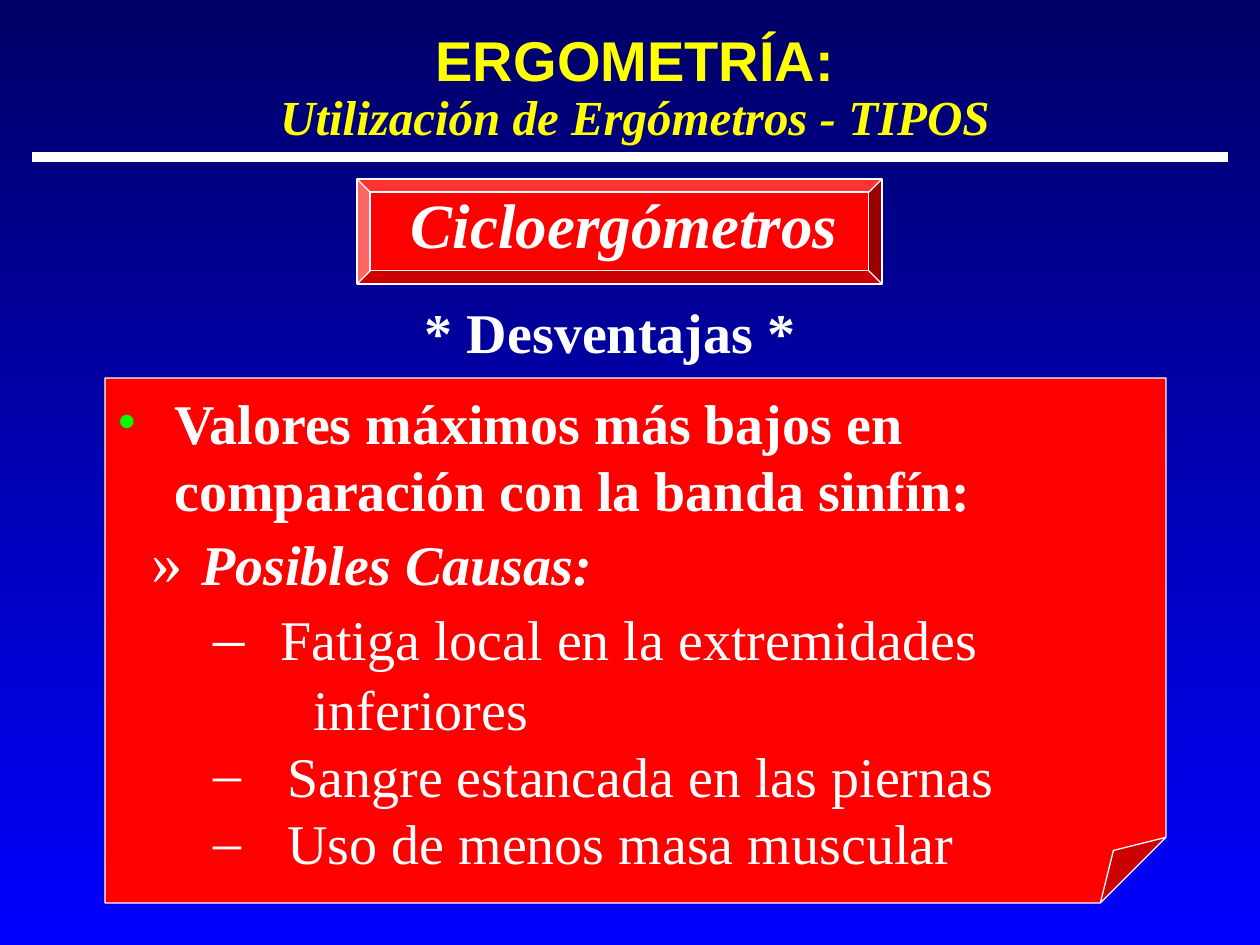
from dataclasses import dataclass

from lxml import etree
from pptx import Presentation
from pptx.dml.color import RGBColor
from pptx.enum.shapes import MSO_CONNECTOR, MSO_SHAPE
from pptx.enum.text import MSO_ANCHOR, PP_ALIGN
from pptx.oxml.ns import qn
from pptx.util import Emu, Pt

PX = 914400 / 126
LEFT, MID, RIGHT = PP_ALIGN.LEFT, PP_ALIGN.CENTER, PP_ALIGN.RIGHT
TOP, HALF = MSO_ANCHOR.TOP, MSO_ANCHOR.MIDDLE
FOLD, BEVEL = MSO_SHAPE.FOLDED_CORNER, MSO_SHAPE.BEVEL
LINE = MSO_CONNECTOR.STRAIGHT

COLORS = {
    "navy": "000066", "blue": "0000FF", "red": "FF0000", "white": "FFFFFF",
    "yellow": "FFFF00", "green": "00FF00", "gray": "808080",
}
SERIF = {"name": "Times New Roman", "size": Pt(32), "bold": False, "italic": False}
FORMATS = {
    "head": {"name": "Arial", "size": Pt(32), "bold": True, "italic": False},
    "sub": SERIF | {"size": Pt(28), "bold": True, "italic": True},
    "label": SERIF | {"size": Pt(36), "bold": True, "italic": True},
    "strong": SERIF | {"bold": True},
    "cause": SERIF | {"bold": True, "italic": True},
    "plain": SERIF,
}


@dataclass
class Para:
    """Each run is (text, format); a line break parts the runs."""
    runs: list[tuple[str, str]]
    color: str = "white"
    align: PP_ALIGN = LEFT
    lines: float = 1.0
    before: int = 0
    left: int = 0
    hang: int = 0
    bullet: str = ""
    tint: str = "white"
    scale: int = 100
    shadow: bool = False


@dataclass
class Box:
    at: tuple[int, int, int, int]
    paras: list[Para]
    anchor: MSO_ANCHOR = TOP
    wrap: bool = True


@dataclass
class Panel:
    kind: MSO_SHAPE
    at: tuple[int, int, int, int]


PANELS = [
    Panel(FOLD, (105, 378, 1061, 525)),
    Panel(BEVEL, (357, 179, 525, 105)),
]
BOXES = [
    Box((220, 53, 830, 73), [
        Para([("ERGOMETRÍA:", "head"), ("Utilización de Ergómetros - TIPOS", "sub")],
             "yellow", MID, 0.9),
    ], HALF),
    Box((346, 200, 557, 84), [
        Para([("Cicloergómetros", "label")], align=MID, lines=0.7, shadow=True),
    ]),
    Box((105, 382, 1029, 500), [
        Para([("Valores máximos más bajos en", "strong"),
              ("comparación con la banda sinfín:", "strong")],
             left=57, hang=57, bullet="•", tint="green"),
        Para([("Posibles Causas:", "cause")],
             before=7, left=84, hang=50, bullet="»", scale=112),
        Para([("Fatiga local en la extremidades", "plain")],
             before=8, left=163, hang=67, bullet="–", scale=112),
        Para([("inferiores", "plain")], before=2, left=196),
        Para([("Sangre estancada en las piernas", "plain")],
             left=170, hang=74, bullet="–"),
        Para([("Uso de menos masa muscular", "plain")],
             left=170, hang=74, bullet="–"),
    ]),
    Box((398, 291, 410, 79), [
        Para([("* Desventajas *", "strong")], align=RIGHT),
    ], wrap=False),
]


def emu(px: int) -> Emu:
    return Emu(round(px * PX))


def rgb(name: str) -> RGBColor:
    return RGBColor.from_string(COLORS[name])


def add_tag(parent, tag: str, **attrs):
    return etree.SubElement(parent, qn(tag), attrs)


def add_color(parent, name: str) -> None:
    add_tag(parent, "a:srgbClr", val=COLORS[name])


def add_glow(run) -> None:
    """Put a gray shadow behind the letters."""
    props = run.font._element
    effects = etree.Element(qn("a:effectLst"))
    shade = add_tag(effects, "a:outerShdw", dist="35921", dir="2700000")
    add_color(shade, "gray")
    props.find(qn("a:solidFill")).addnext(effects)


def draw_para(para, data: Para) -> None:
    para.alignment = data.align
    para.line_spacing = data.lines
    para.space_before = emu(data.before)
    props = para._p.get_or_add_pPr()
    props.set("marL", str(emu(data.left)))
    props.set("indent", str(-emu(data.hang)))
    if data.bullet:
        add_color(add_tag(props, "a:buClr"), data.tint)
        add_tag(props, "a:buSzPct", val=str(data.scale * 1000))
        add_tag(props, "a:buFont", typeface="Times New Roman")
        add_tag(props, "a:buChar", char=data.bullet)
    for spot, (text, style) in enumerate(data.runs):
        if spot:
            para.add_line_break()
        run = para.add_run()
        run.text = text
        for key, value in FORMATS[style].items():
            setattr(run.font, key, value)
        run.font.color.rgb = rgb(data.color)
        if data.shadow:
            add_glow(run)


def draw_box(slide, box: Box) -> None:
    frame = slide.shapes.add_textbox(*map(emu, box.at)).text_frame
    frame.word_wrap = box.wrap
    frame.vertical_anchor = box.anchor
    for spot, data in enumerate(box.paras):
        draw_para(frame.add_paragraph() if spot else frame.paragraphs[0], data)


def draw_panel(slide, panel: Panel) -> None:
    shape = slide.shapes.add_shape(panel.kind, *map(emu, panel.at))
    # These presets may list no adjustment, so the guide is written directly
    guides = shape._element.spPr.find(qn("a:prstGeom")).get_or_add_avLst()
    for old in list(guides):
        guides.remove(old)
    add_tag(guides, "a:gd", name="adj", fmla="val 12500")
    shape.shadow.inherit = False
    shape.fill.solid()
    shape.fill.fore_color.rgb = rgb("red")
    shape.line.color.rgb = rgb("white")
    shape.line.width = Pt(0.75)


def draw_rule(slide) -> None:
    rule = slide.shapes.add_connector(LINE, *map(emu, (32, 157, 1228, 157)))
    rule.line.color.rgb = rgb("white")
    rule.line.width = Pt(6)
    add_tag(rule._element.spPr, "a:effectLst")


def main() -> None:
    deck = Presentation()
    deck.slide_width, deck.slide_height = emu(1260), emu(945)
    slide = deck.slides.add_slide(deck.slide_layouts[6])

    # Background, dark at the top
    fill = slide.background.fill
    fill.gradient()
    fill.gradient_angle = 270
    for stop, name in zip(fill.gradient_stops, ("navy", "blue")):
        stop.color.rgb = rgb(name)

    # Rule and panels, then the text over them
    draw_rule(slide)
    for panel in PANELS:
        draw_panel(slide, panel)
    for box in BOXES:
        draw_box(slide, box)
    deck.save("out.pptx")


if __name__ == "__main__":
    main()
